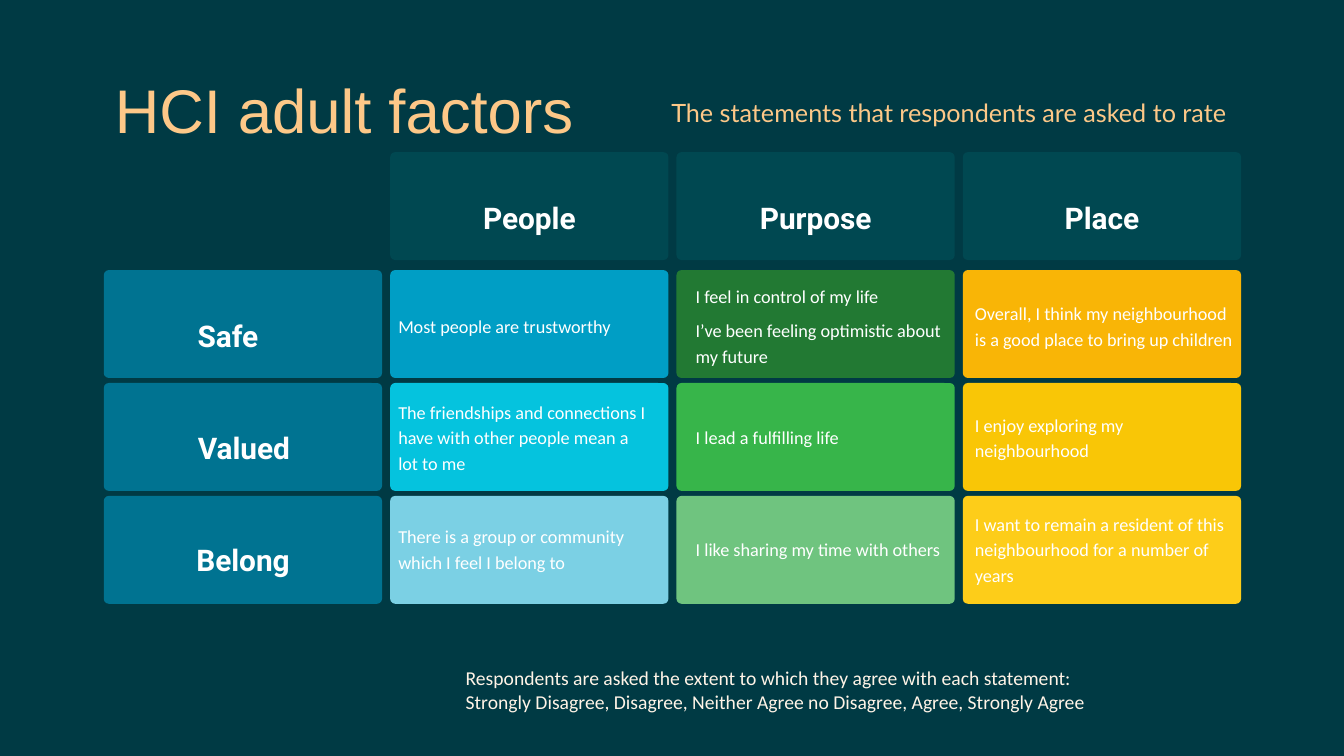
"""Build the slide of adult factors: a grid of statements by theme and feeling."""
from dataclasses import dataclass
from pptx import Presentation, util as u
from pptx.dml.color import RGBColor
from pptx.enum import shapes, text

TITLE = "HCI adult factors"
SUBTITLE = "The statements that respondents are asked to rate"
NOTE = [
    "Respondents are asked the extent to which they agree with each statement:",
    "Strongly Disagree, Disagree, Neither Agree no Disagree, Agree, Strongly Agree",
]
THEMES = [("People", 1.45), ("Purpose", 1.74), ("Place", 1.14)]
FEELINGS = [("Safe", 1.79, 0.94), ("Valued", 1.68, 1.48), ("Belong", 1.67, 1.48)]
STATEMENTS = [
    [["Most people are trustworthy"],
     ["I feel in control of my life", "I’ve been feeling optimistic about my future"],
     ["Overall, I think my neighbourhood is a good place to bring up children"]],
    [["The friendships and connections I have with other people mean a lot to me"],
     ["I lead a fulfilling life"],
     ["I enjoy exploring my neighbourhood"]],
    [["There is a group or community which I feel I belong to"],
     ["I like sharing my time with others"],
     ["I want to remain a resident of this neighbourhood for a number of years"]],
]
CARD_COLOURS = [
    ["007391", "009EC5", "227933", "F9B506"],
    ["007391", "05C3DE", "37B54A", "F9C606"],
    ["007391", "7BD0E4", "6FC47F", "FDCD19"],
]


@dataclass(frozen=True)
class Style:
    font: str
    size: float
    colour: str
    bold: bool = False


@dataclass(frozen=True)
class Theme:
    background: str = "003A44"
    header: str = "004851"
    title: Style = Style("Arial", 44, "FDC888")
    subtitle: Style = Style("Lato", 18, "FDC888")
    label: Style = Style("Roboto", 21.3, "FFFFFF", True)
    statement: Style = Style("Calibri", 13, "FFFFFF")
    note: Style = Style("Calibri", 14, "FFF4E7")


THEME = Theme()
GRID_LEFT, COLUMN_STEP = 1.03, 2.84
HEADER_TOP, GRID_TOP, ROW_STEP = 1.51, 2.68, 1.12
CARD_WIDTH, CARD_HEIGHT, CARD_RADIUS = 2.76, 1.07, 0.05
LABEL_DROP, LABEL_STEP, LABEL_HEIGHT = 0.18, 1.11, 0.56
TABLE_LEFT, TABLE_COLUMNS, TABLE_ROWS = 3.92, [2.57, 0.38, 2.5, 0.27, 2.68], [1.1, 1.11, 1.11]
PLAIN_TABLE_STYLE = "{2D5ABB26-0587-4C30-8999-92F81FD0307C}"


def write(frame, lines, style, align=None, spacing=None, after=None):
    for index, line in enumerate(lines):
        paragraph = frame.paragraphs[0] if index == 0 else frame.add_paragraph()
        paragraph.alignment = align
        paragraph.line_spacing = spacing
        paragraph.space_after = after
        run = paragraph.add_run()
        run.text = line
        run.font.name, run.font.size, run.font.bold = style.font, u.Pt(style.size), style.bold
        run.font.color.rgb = RGBColor.from_string(style.colour)


def add_text(slide, box, lines, style, wrap=True, **layout):
    frame = slide.shapes.add_textbox(*map(u.Inches, box)).text_frame
    frame.word_wrap = wrap
    write(frame, lines, style, **layout)
    return frame


def add_label(slide, left, top, width, label):
    frame = add_text(slide, (left, top, width, LABEL_HEIGHT), [label], THEME.label,
                     align=text.PP_ALIGN.CENTER, spacing=u.Pt(46.7))
    frame.margin_left = frame.margin_top = frame.margin_right = frame.margin_bottom = 0
    frame.auto_size = text.MSO_AUTO_SIZE.SHAPE_TO_FIT_TEXT


def add_card(slide, column, top, colour):
    box = (GRID_LEFT + column * COLUMN_STEP, top, CARD_WIDTH, CARD_HEIGHT)
    card = slide.shapes.add_shape(shapes.MSO_SHAPE.ROUNDED_RECTANGLE, *map(u.Inches, box))
    card.adjustments[0] = CARD_RADIUS / CARD_HEIGHT
    card.shadow.inherit = False
    card.fill.solid()
    card.fill.fore_color.rgb = RGBColor.from_string(colour)
    card.line.fill.background()


def add_statements(slide):
    box = (TABLE_LEFT, GRID_TOP, sum(TABLE_COLUMNS), sum(TABLE_ROWS))
    table = slide.shapes.add_table(len(TABLE_ROWS), len(TABLE_COLUMNS), *map(u.Inches, box)).table
    table.first_row = table.horz_banding = False
    table._tbl.tblPr[0].text = PLAIN_TABLE_STYLE
    for column, width in zip(table.columns, TABLE_COLUMNS):
        column.width = u.Inches(width)
    for row, height in zip(table.rows, TABLE_ROWS):
        row.height = u.Inches(height)
    for cell in table.iter_cells():
        cell.fill.background()
        cell.vertical_anchor = text.MSO_ANCHOR.MIDDLE
        cell.margin_left = cell.margin_right = u.Inches(0.03)
        cell.margin_top = cell.margin_bottom = 0
    for row, statements in enumerate(STATEMENTS):
        for column, lines in enumerate(statements):
            write(table.cell(row, 2 * column).text_frame, lines, THEME.statement,
                  spacing=1.15, after=u.Pt(6))


def main():
    presentation = Presentation()
    presentation.slide_width, presentation.slide_height = u.Inches(13.33), u.Inches(7.5)
    slide = presentation.slides.add_slide(presentation.slide_layouts[6])
    slide.background.fill.solid()
    slide.background.fill.fore_color.rgb = RGBColor.from_string(THEME.background)

    title = add_text(slide, (1.04, 0.4, 11.19, 1.45), [TITLE], THEME.title, spacing=0.9)
    title.vertical_anchor = text.MSO_ANCHOR.MIDDLE

    for row, colours in enumerate(CARD_COLOURS):
        for column, colour in enumerate(colours):
            add_card(slide, column, GRID_TOP + row * ROW_STEP, colour)
    for column, (label, width) in enumerate(THEMES, start=1):
        add_card(slide, column, HEADER_TOP, THEME.header)
        centre = GRID_LEFT + column * COLUMN_STEP + CARD_WIDTH / 2
        add_label(slide, centre - width / 2, HEADER_TOP + LABEL_DROP, width, label)
    for row, (label, left, width) in enumerate(FEELINGS):
        add_label(slide, left, GRID_TOP + LABEL_DROP + row * LABEL_STEP, width, label)

    add_statements(slide)
    note = add_text(slide, (4.52, 6.56, 8.09, 0.57), NOTE, THEME.note, wrap=False)
    note.auto_size = text.MSO_AUTO_SIZE.SHAPE_TO_FIT_TEXT
    add_text(slide, (6.56, 0.95, 5.83, 0.46), [SUBTITLE], THEME.subtitle,
             align=text.PP_ALIGN.JUSTIFY, spacing=0.9)
    presentation.save("out.pptx")


if __name__ == "__main__":
    main()
